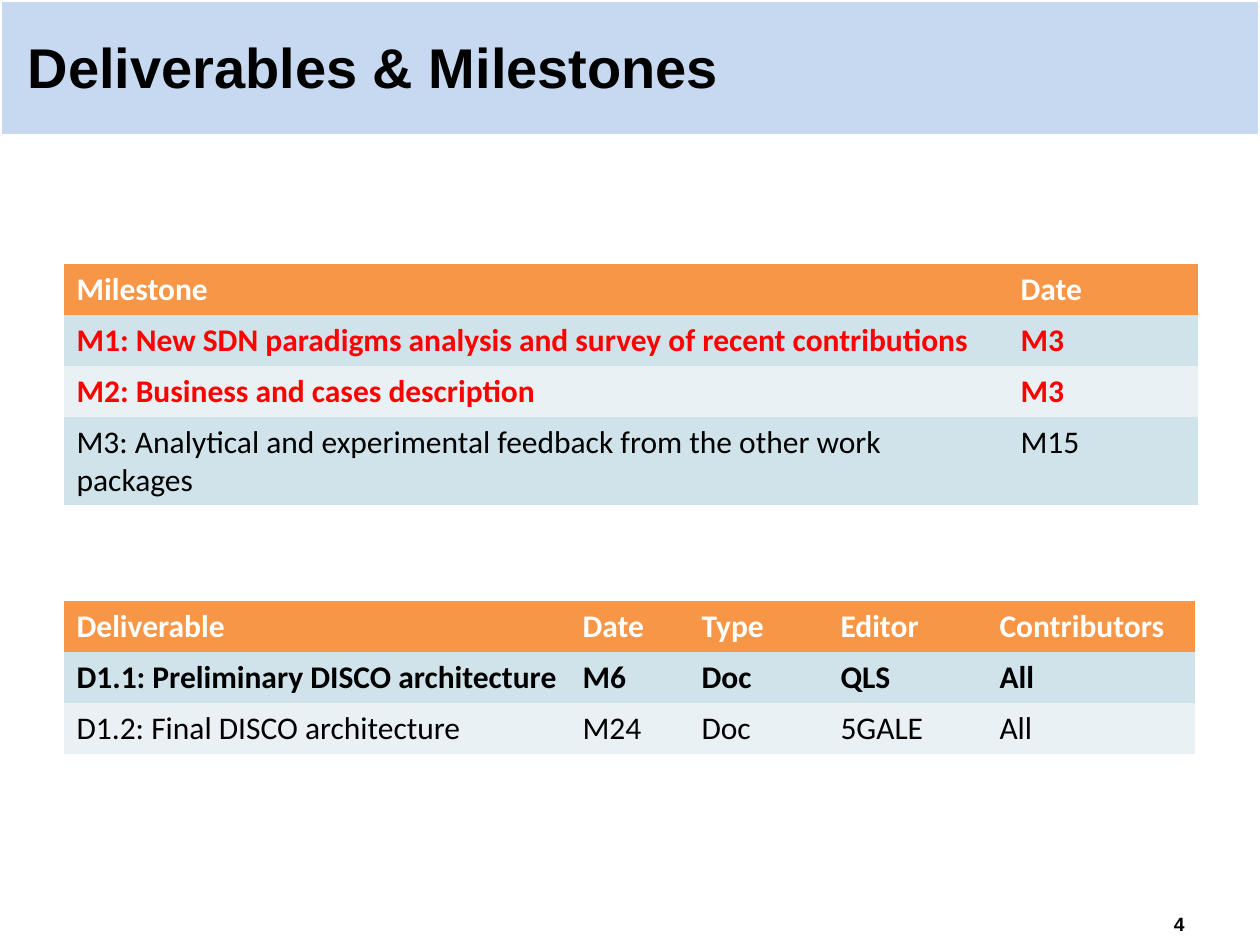
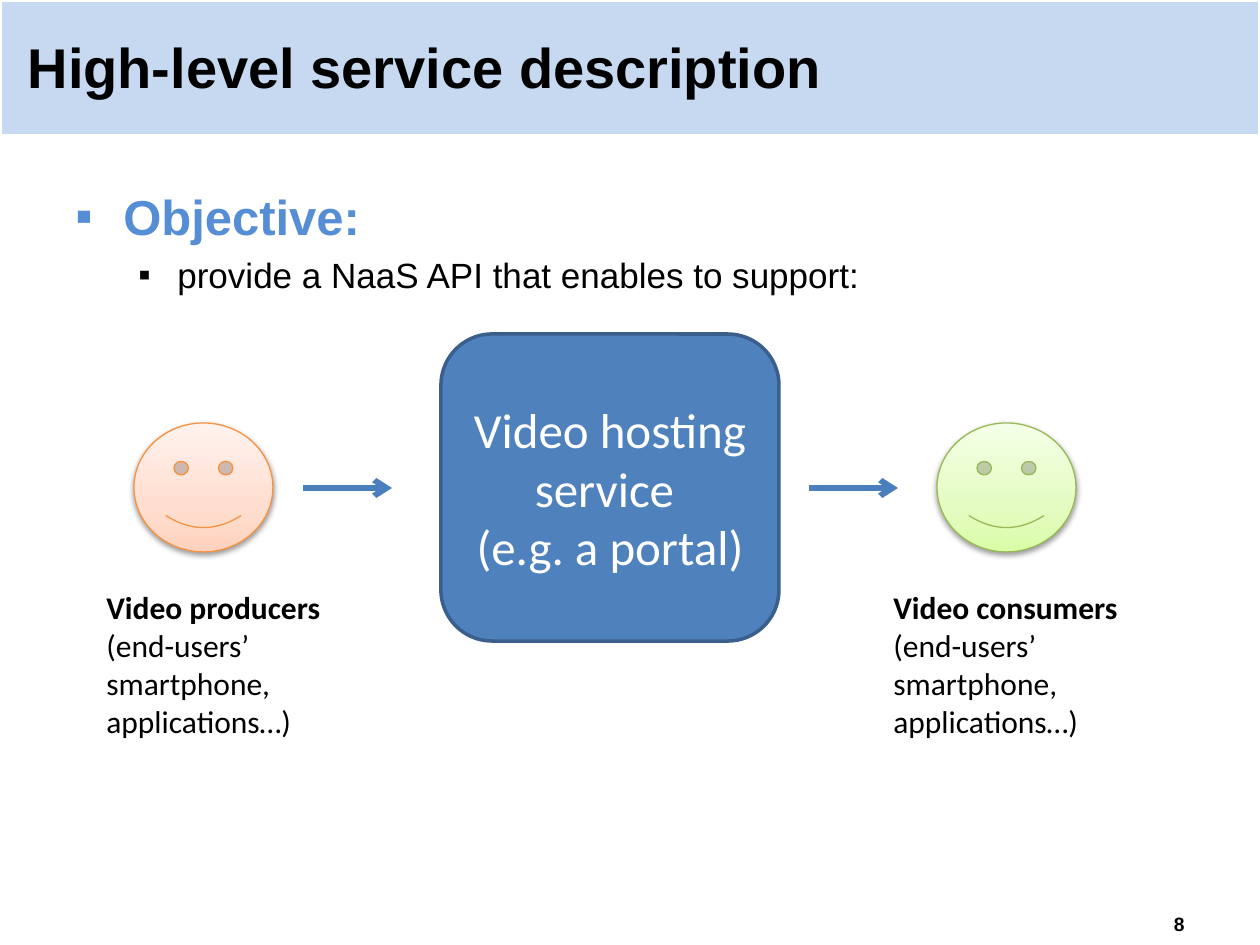
"""Build two project slides: deliverables and milestones, and a service description."""
import copy

import pptx
import pptx.dml.color
import pptx.enum.shapes
import pptx.enum.text
import pptx.oxml
import pptx.oxml.ns
import pptx.util
from lxml import etree

COLORS = {
    "band": "C6D9F1", "white": "FFFFFF", "black": "000000", "header": "F79646",
    "row_dark": "D0E3EA", "row_light": "E9F1F5", "done": "FF0000", "objective": "558ED5",
    "service": "4F81BD", "service_edge": "3A5F8C", "arrow": "4B7EBC",
    "producer_edge": "F69240", "consumer_edge": "98B955",
}
FACE_POSITIONS = (0, 0.35, 1)
PRODUCER_SHADES = ("FFD2BD", "FFDED0", "FFF2ED")
CONSUMER_SHADES = ("DAFDA7", "E4FCC2", "F5FFE7")
NO_TABLE_STYLE = "{2D5ABB26-0587-4C30-8999-92F81FD0307C}"
EMU_PER_PX = 914400 / 126
SHAPES = pptx.enum.shapes.MSO_SHAPE
ALIGN = pptx.enum.text.PP_ALIGN
MIDDLE = pptx.enum.text.MSO_ANCHOR.MIDDLE
rgb = pptx.dml.color.RGBColor.from_string
qn = pptx.oxml.ns.qn


def px(*lengths):
    """Turn pixel lengths into EMU."""
    return [pptx.util.Emu(round(length * EMU_PER_PX)) for length in lengths]


def write(paragraph, text, size=18, font="Calibri", color="black", bold=False,
          align=ALIGN.LEFT, before=0, bullet=None, indent=(0, 0)):
    """Add a formatted run of text to a paragraph."""
    paragraph.alignment = align
    if before:
        paragraph.space_before = pptx.util.Pt(before)
    if bullet:
        properties = paragraph._p.get_or_add_pPr()
        left, hanging = px(*indent)
        properties.set("marL", str(left))
        properties.set("indent", str(-hanging))
        etree.SubElement(properties, qn("a:buFont"), typeface="Arial")
        etree.SubElement(properties, qn("a:buChar"), char=bullet)
    run = paragraph.add_run()
    run.text = text
    run.font.size = pptx.util.Pt(size)
    run.font.name = font
    run.font.bold = bold
    run.font.color.rgb = rgb(COLORS[color])


deck = pptx.Presentation()
deck.slide_width, deck.slide_height = px(1260, 945)
title_only = deck.slide_layouts[5]

slides = []
for heading, number in (("Deliverables & Milestones", "4"), ("High-level service description", "8")):
    slide = deck.slides.add_slide(title_only)
    slides.append(slide)
    title = slide.shapes.title
    title.left, title.top, title.width, title.height = px(15, 8, 1201, 117)
    title.text_frame.vertical_anchor = MIDDLE
    write(title.text_frame.paragraphs[0], heading, size=32, font="Arial", bold=True)

    band = slide.shapes.add_shape(SHAPES.RECTANGLE, *px(0, 0, 1260, 136))
    band.shadow.inherit = False
    band.fill.solid()
    band.fill.fore_color.rgb = rgb(COLORS["band"])
    band.line.color.rgb = rgb(COLORS["white"])
    band.line.width = pptx.util.Pt(2)
    title.element.addprevious(band.element)

    page_number = slide.shapes.add_textbox(*px(903, 899, 294, 50)).text_frame
    page_number.word_wrap = True
    page_number.vertical_anchor = MIDDLE
    write(page_number.paragraphs[0], number, size=11, font="Arial", bold=True, align=ALIGN.RIGHT)

plan_slide, service_slide = slides

milestones = (
    ("header", True, ("Milestone", "Date")),
    ("done", True, ("M1: New SDN paradigms analysis and survey of recent contributions", "M3")),
    ("done", True, ("M2: Business and cases description", "M3")),
    ("black", False, ("M3: Analytical and experimental feedback from the other work packages", "M15")),
)
deliverables = (
    ("header", True, ("Deliverable", "Date", "Type", "Editor", "Contributors")),
    ("black", True, ("D1.1: Preliminary DISCO architecture", "M6", "Doc", "QLS", "All")),
    ("black", False, ("D1.2: Final DISCO architecture", "M24", "Doc", "5GALE", "All")),
)
for top, widths, rows in (
    (264, (944, 190), milestones),
    (601, (506, 119, 139, 159, 208), deliverables),
):
    frame = plan_slide.shapes.add_table(
        len(rows), len(widths), *px(64, top, sum(widths), 51 * len(rows)))
    table = frame.table
    table.horz_banding = False
    table._tbl.find(".//" + qn("a:tableStyleId")).text = NO_TABLE_STYLE
    for column, width in zip(table.columns, px(*widths)):
        column.width = width
    for index, (role, bold, texts) in enumerate(rows):
        is_header = role == "header"
        fill = "header" if is_header else "row_dark" if index % 2 else "row_light"
        for cell, text in zip(table.rows[index].cells, texts):
            cell.fill.solid()
            cell.fill.fore_color.rgb = rgb(COLORS[fill])
            write(cell.text_frame.paragraphs[0], text, bold=bold,
                  color="white" if is_header else role)

objective = service_slide.shapes.add_textbox(*px(63, 180, 1134, 120)).text_frame
objective.word_wrap = True
write(objective.paragraphs[0], "Objective:", size=28, font="Arial", color="objective",
      bold=True, bullet="▪", indent=(48, 48))
write(objective.add_paragraph(), "provide a NaaS API that enables to support:", size=20,
      font="Arial", before=5, bullet="▪", indent=(102, 39))

service = service_slide.shapes.add_shape(SHAPES.ROUNDED_RECTANGLE, *px(441, 334, 338, 307))
service.shadow.inherit = False
service.fill.solid()
service.fill.fore_color.rgb = rgb(COLORS["service"])
service.line.color.rgb = rgb(COLORS["service_edge"])
service.line.width = pptx.util.Pt(2)
service.text_frame.word_wrap = True
service.text_frame.vertical_anchor = MIDDLE
write(service.text_frame.paragraphs[0], "Video hosting service ", size=28, color="white",
      align=ALIGN.CENTER)
write(service.text_frame.add_paragraph(), "(e.g. a portal)", size=28, color="white",
      align=ALIGN.CENTER)

for face_left, arrow_left, label_left, edge, shades, party in (
    (134, 303, 94, "producer_edge", PRODUCER_SHADES, "Video producers "),
    (937, 809, 881, "consumer_edge", CONSUMER_SHADES, "Video consumers "),
):
    face = service_slide.shapes.add_shape(SHAPES.SMILEY_FACE, *px(face_left, 423, 139, 129))
    face.line.color.rgb = rgb(COLORS[edge])
    face.line.width = pptx.util.Pt(0.75)
    face.fill.gradient()
    face.fill.gradient_angle = 90
    stop_list = face.element.spPr.find(".//" + qn("a:gsLst"))
    stop_list.insert(1, copy.deepcopy(stop_list[0]))
    for stop, position, shade in zip(face.fill.gradient_stops, FACE_POSITIONS, shades):
        stop.position = position
        stop.color.rgb = rgb(shade)
    face.shadow.inherit = False
    shadow = etree.SubElement(face.element.spPr.find(qn("a:effectLst")), qn("a:outerShdw"),
                              blurRad="40000", dist="20000", dir="5400000", rotWithShape="0")
    shadow_color = etree.SubElement(shadow, qn("a:srgbClr"), val=COLORS["black"])
    etree.SubElement(shadow_color, qn("a:alpha"), val="38000")

    arrow = service_slide.shapes.add_connector(
        pptx.enum.shapes.MSO_CONNECTOR.STRAIGHT, *px(arrow_left, 488, arrow_left + 89, 488))
    arrow.line.color.rgb = rgb(COLORS["arrow"])
    arrow.line.width = pptx.util.Pt(3.25)
    etree.SubElement(arrow.line._get_or_add_ln(), qn("a:tailEnd"), type="arrow")
    etree.SubElement(arrow.element.spPr, qn("a:effectLst"))

    label = service_slide.shapes.add_textbox(*px(label_left, 582, 253, 165)).text_frame
    label.word_wrap = True
    write(label.paragraphs[0], party, bold=True)
    write(label.paragraphs[0], "(end-users’ smartphone, applications…)")

deck.save("out.pptx")
